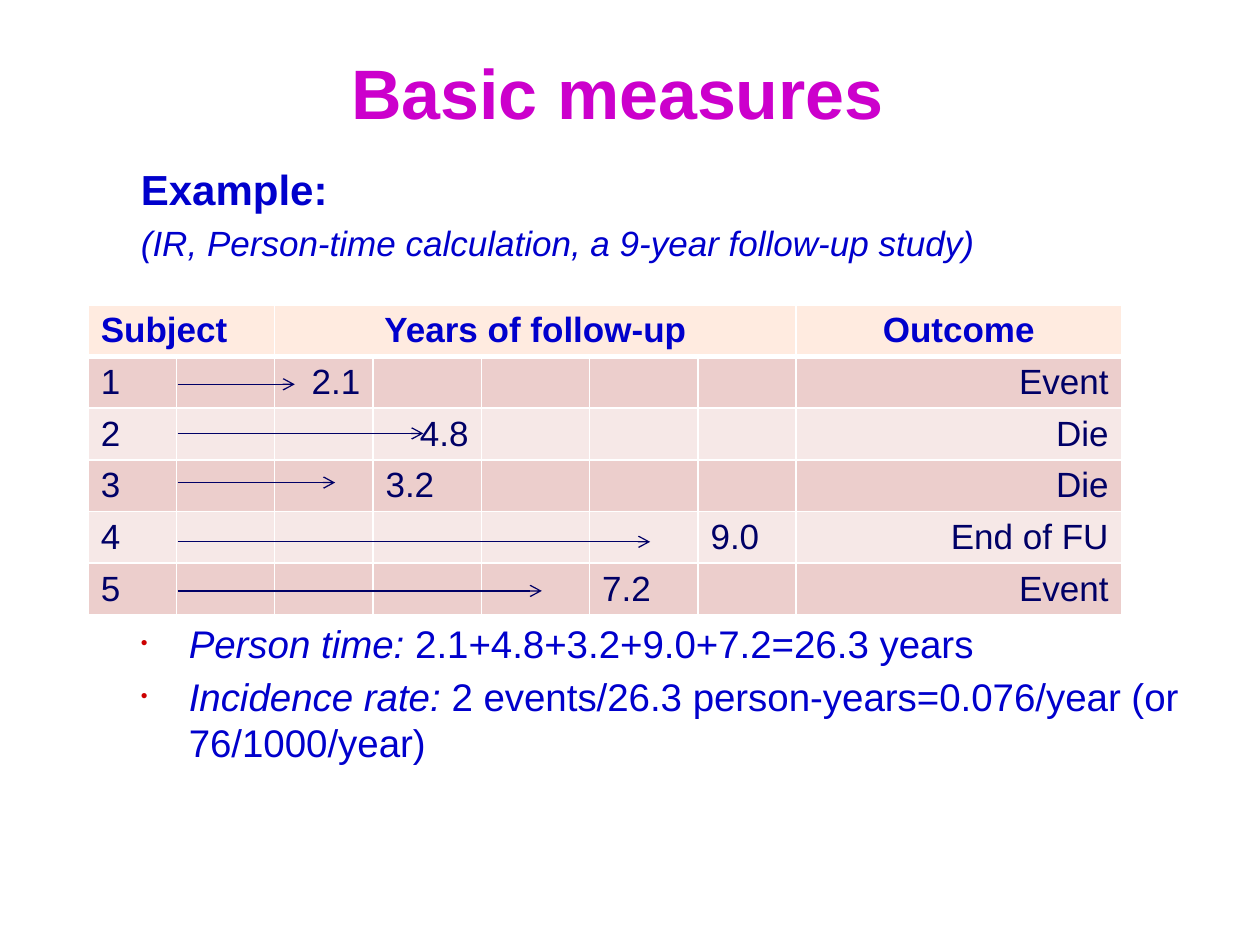
from lxml.etree import SubElement
from pptx import Presentation
from pptx.dml.color import RGBColor as Rgb
from pptx.enum.shapes import MSO_CONNECTOR as Connector
from pptx.enum.text import MSO_ANCHOR as Anchor, PP_ALIGN as Align
from pptx.oxml import parse_xml
from pptx.oxml.ns import nsdecls, qn
from pptx.util import Inches, Pt

COLORS = {
    "title": "CC00CC", "text": "0000CC", "data": "000066", "bullet": "CC0000",
    "header": "FFEBE0", "dark": "ECCECC", "light": "F6E8E7", "border": "FFFFFF",
}
COLUMNS = [0.7, 0.78, 0.78, 0.86, 0.86, 0.86, 0.78, 2.58]
ROW_HEIGHT = 0.41
CELL_MARGIN = 0.02
HEADERS = [(0, 1, "Subject", Align.LEFT),
           (2, 6, "Years of follow-up", Align.CENTER),
           (7, 7, "Outcome", Align.CENTER)]
SUBJECTS = [("2.1", 2, Align.RIGHT, "Event"),
            ("4.8", 3, Align.RIGHT, "Die"),
            ("3.2", 3, Align.LEFT, "Die"),
            ("9.0", 6, Align.LEFT, "End of FU"),
            ("7.2", 5, Align.LEFT, "Event")]
ARROW_START = 1.41
ARROWS = [(2.34, 3.05), (3.36, 3.44), (2.66, 3.83), (5.16, 4.3), (4.3, 4.69)]


def add_span(para, text, size=20, color="text", bold=False, italic=False):
    span = para.add_run()
    span.text = text
    font = span.font
    font.name, font.size, font.bold, font.italic = "Arial", Pt(size), bold, italic
    font.color.rgb = Rgb.from_string(COLORS[color])


class SlideWriter:
    def __init__(self, slide):
        self.slide = slide

    def title(self, text, left, top, width, height):
        box = self.slide.shapes.title
        box.left, box.top = Inches(left), Inches(top)
        box.width, box.height = Inches(width), Inches(height)
        box.text_frame.vertical_anchor = Anchor.MIDDLE
        para = box.text_frame.paragraphs[0]
        para.alignment = Align.CENTER
        add_span(para, text, size=40, color="title", bold=True)

    def text(self, paragraphs, left, top, width, height, gap, bullets=False):
        box = self.slide.shapes.add_textbox(
            Inches(left), Inches(top), Inches(width), Inches(height))
        frame = box.text_frame
        frame.word_wrap = True
        for index, spans in enumerate(paragraphs):
            para = frame.add_paragraph() if index else frame.paragraphs[0]
            if index:
                para.space_before = Pt(gap)
            if bullets:
                self.bullet(para)
            for text, style in spans:
                add_span(para, text, **style)

    def bullet(self, para):
        props = para._p.get_or_add_pPr()
        props.set("marL", str(Inches(0.38)))
        props.set("indent", str(-Inches(0.38)))
        color = SubElement(props, qn("a:buClr"))
        SubElement(color, qn("a:srgbClr"), val=COLORS["bullet"])
        SubElement(props, qn("a:buSzPct"), val="50000")
        SubElement(props, qn("a:buFont"), typeface="Arial")
        SubElement(props, qn("a:buChar"), char="•")

    def table(self, left, top):
        rows = len(SUBJECTS) + 1
        table = self.slide.shapes.add_table(
            rows, len(COLUMNS), Inches(left), Inches(top),
            Inches(sum(COLUMNS)), Inches(rows * ROW_HEIGHT)).table
        table.first_row = table.horz_banding = False
        for column, width in zip(table.columns, COLUMNS):
            column.width = Inches(width)
        for number, row in enumerate(table.rows):
            row.height = Inches(ROW_HEIGHT)
            fill = ("dark" if number % 2 else "light") if number else "header"
            for cell in row.cells:
                cell.margin_top = cell.margin_bottom = Inches(CELL_MARGIN)
                cell.vertical_anchor = Anchor.MIDDLE
                cell.fill.solid()
                cell.fill.fore_color.rgb = Rgb.from_string(COLORS[fill])
                self.borders(cell, top=3 if number == 1 else 1,
                             bottom=1 if number else 3)
        for first, last, text, align in HEADERS:
            cell = table.cell(0, first)
            if last > first:
                cell.merge(table.cell(0, last))
            self.cell(cell, text, align, bold=True)
        for number, (years, column, align, outcome) in enumerate(SUBJECTS, 1):
            self.cell(table.cell(number, 0), str(number), color="data")
            self.cell(table.cell(number, column), years, align, color="data")
            self.cell(table.cell(number, 7), outcome, Align.RIGHT, color="data")

    def cell(self, cell, text, align=Align.LEFT, **style):
        para = cell.text_frame.paragraphs[0]
        para.alignment = align
        add_span(para, text, **style)

    def borders(self, cell, top, bottom):
        props = cell._tc.get_or_add_tcPr()
        sides = [("L", 1), ("R", 1), ("T", top), ("B", bottom)]
        for index, (side, width) in enumerate(sides):
            props.insert(index, parse_xml(
                f'<a:ln{side} {nsdecls("a")} w="{Pt(width)}"><a:solidFill>'
                f'<a:srgbClr val="{COLORS["border"]}"/></a:solidFill></a:ln{side}>'))

    def arrow(self, start, end, y):
        arrow = self.slide.shapes.add_connector(
            Connector.STRAIGHT, Inches(start), Inches(y), Inches(end), Inches(y))
        arrow.line.color.rgb = Rgb.from_string(COLORS["data"])
        arrow.line.width = Pt(0.75)
        SubElement(arrow.line._get_or_add_ln(), qn("a:tailEnd"), type="arrow")
        SubElement(arrow._element.spPr, qn("a:effectLst"))


def main():
    deck = Presentation()
    deck.slide_width, deck.slide_height = Inches(10), Inches(7.5)
    page = SlideWriter(deck.slides.add_slide(deck.slide_layouts[5]))
    page.title("Basic measures", 0.4, 0.29, 9, 0.87)
    page.text([
        [("Example:", dict(size=24, bold=True))],
        [("(IR, Person-time calculation, a 9-year follow-up study)",
          dict(italic=True))],
    ], 1.02, 1.25, 8.47, 0.9, gap=4.5)
    plain, slanted = dict(size=22), dict(size=22, italic=True)
    page.text([
        [("Person time:", slanted), (" 2.1+4.8+3.2+9.0+7.2=26.3 years", plain)],
        [("Incidence rate:", slanted),
         (" 2 events/26.3 person-years=0.076/year (or 76/1000/year)", plain)],
    ], 1.02, 4.87, 8.47, 1.57, gap=4, bullets=True)
    page.table(0.7, 2.42)
    for end, y in ARROWS:
        page.arrow(ARROW_START, end, y)
    deck.save("out.pptx")


if __name__ == "__main__":
    main()
